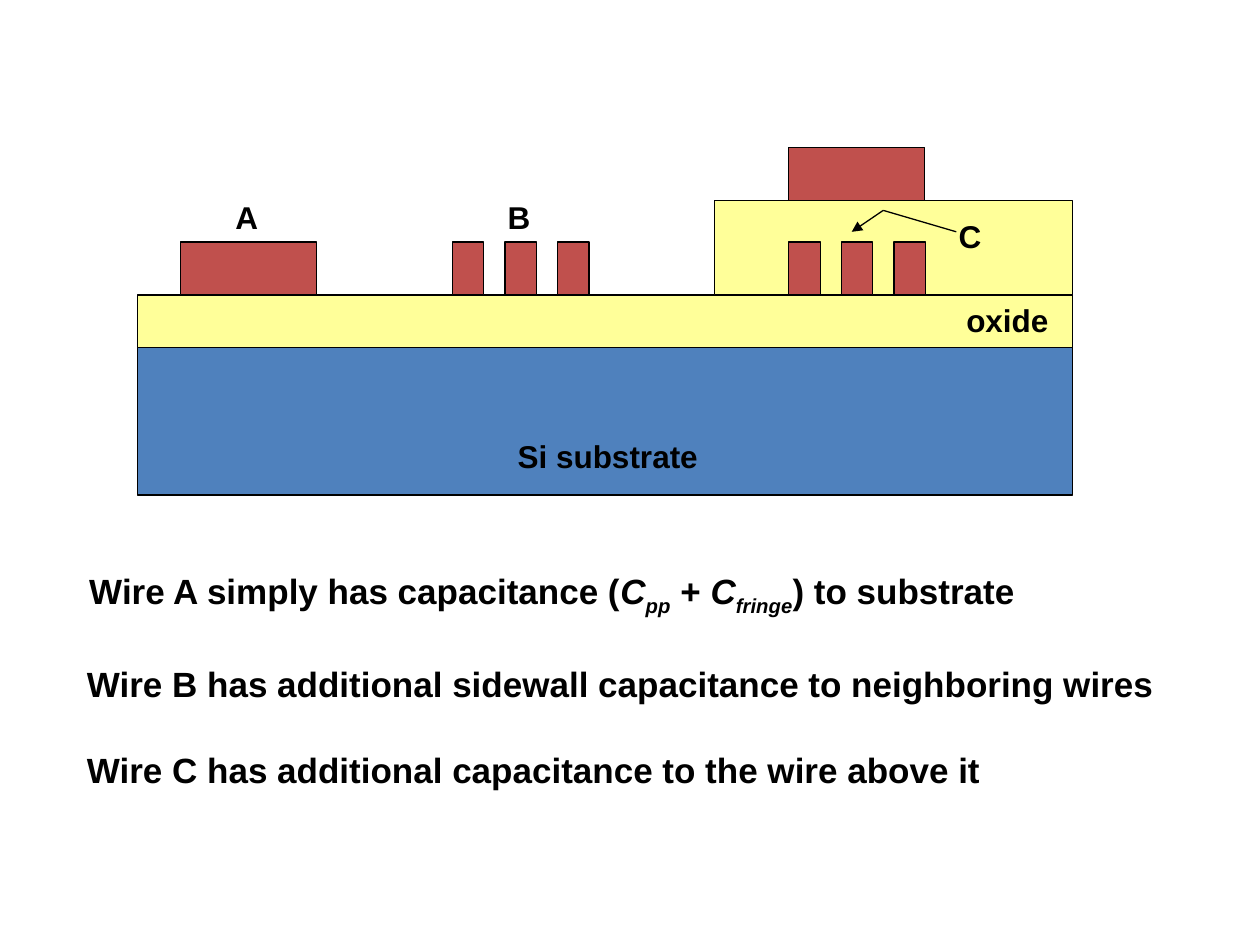
from lxml.etree import SubElement
from pptx import Presentation
from pptx.dml.color import RGBColor
from pptx.enum.shapes import MSO_CONNECTOR, MSO_SHAPE
from pptx.enum.text import PP_ALIGN
from pptx.oxml.ns import qn
from pptx.util import Inches, Pt

BLACK = RGBColor(0x00, 0x00, 0x00)
METAL = RGBColor(0xC0, 0x50, 0x4D)
OXIDE = RGBColor(0xFF, 0xFF, 0x99)
SILICON = RGBColor(0x4F, 0x81, 0xBD)

# Cross-section geometry, in inches
STACK_LEFT, STACK_WIDTH = 1.09, 7.42
SURFACE = 2.34                      # top of the lower oxide
LAYER = 0.42                        # thickness of oxide and of each wire
SUBSTRATE_HEIGHT = 1.17
COVER_LEFT, COVER_HEIGHT = 5.67, 0.75
WIDE_WIRE, NARROW_WIRE, WIRE_PITCH = 1.08, 0.25, 0.417
WIRE_A, WIRES_B, WIRES_C = 1.43, 3.59, 6.26

# Labels: text, left, top, width, alignment
LABELS = [
    ("A", 1.77, 1.52, 0.42, PP_ALIGN.LEFT),
    ("B", 3.93, 1.52, 0.42, PP_ALIGN.LEFT),
    ("C", 7.51, 1.67, 0.33, PP_ALIGN.LEFT),
    ("Si substrate", 4.01, 3.42, 1.66, PP_ALIGN.LEFT),
    ("oxide", 7.0, 2.34, 1.42, PP_ALIGN.RIGHT),
]

# Statements: left, top, width, spans of (text, italic, subscript)
STATEMENTS = [
    (0.61, 4.47, 8.8, [
        ("Wire A simply has capacitance (", False, False),
        ("C", True, False), ("pp", True, True), (" + ", False, False),
        ("C", True, False), ("fringe", True, True),
        (") to substrate", False, False)]),
    (0.59, 5.21, 8.81, [
        ("Wire B has additional sidewall capacitance to neighboring wires", False, False)]),
    (0.59, 5.89, 8.42, [
        ("Wire C has additional capacitance to the wire above it", False, False)]),
]

POINTER = [(7.59, 1.84), (7.01, 1.67), (6.76, 1.84)]


def add_block(page, left, top, width, height, color):
    block = page.shapes.add_shape(
        MSO_SHAPE.RECTANGLE, Inches(left), Inches(top), Inches(width), Inches(height))
    block.shadow.inherit = False
    block.fill.solid()
    block.fill.fore_color.rgb = color
    block.line.color.rgb = BLACK
    block.line.width = Pt(0.75)


def add_text(page, left, top, width, height, size, spans, alignment=PP_ALIGN.LEFT):
    box = page.shapes.add_textbox(Inches(left), Inches(top), Inches(width), Inches(height))
    box.text_frame.word_wrap = True
    para = box.text_frame.paragraphs[0]
    para.alignment = alignment
    para.font.name = "Arial"
    para.font.size = Pt(size)
    para.font.bold = True
    para.font.color.rgb = BLACK
    for text, italic, subscript in spans:
        span = para.add_run()
        span.text = text
        if italic:
            span.font.italic = True
        if subscript:
            span.font._element.set("baseline", "-25000")


def add_line(page, start, end):
    line = page.shapes.add_connector(
        MSO_CONNECTOR.STRAIGHT, *(Inches(value) for value in start + end))
    line.line.color.rgb = BLACK
    line.line.width = Pt(0.75)
    SubElement(line._element.spPr, qn("a:effectLst"))
    return line


def main():
    deck = Presentation()
    deck.slide_width, deck.slide_height = Inches(10), Inches(7.5)
    page = deck.slides.add_slide(deck.slide_layouts[6])

    # Layers
    add_block(page, STACK_LEFT, SURFACE + LAYER, STACK_WIDTH, SUBSTRATE_HEIGHT, SILICON)
    add_block(page, STACK_LEFT, SURFACE, STACK_WIDTH, LAYER, OXIDE)
    add_block(page, COVER_LEFT, SURFACE - COVER_HEIGHT,
              STACK_LEFT + STACK_WIDTH - COVER_LEFT, COVER_HEIGHT, OXIDE)

    # Wires: wide ones, then the two rows of three
    add_block(page, WIRE_A, SURFACE - LAYER, WIDE_WIRE, LAYER, METAL)
    add_block(page, WIRES_C, SURFACE - COVER_HEIGHT - LAYER, WIDE_WIRE, LAYER, METAL)
    for first in (WIRES_B, WIRES_C):
        for index in range(3):
            add_block(page, first + index * WIRE_PITCH, SURFACE - LAYER,
                      NARROW_WIRE, LAYER, METAL)

    # Pointer from label C to the middle wire
    for start, end in zip(POINTER, POINTER[1:]):
        line = add_line(page, start, end)
    SubElement(line.line._get_or_add_ln(), qn("a:tailEnd"), type="triangle")

    # Text
    for text, left, top, width, alignment in LABELS:
        add_text(page, left, top, width, 0.4, 18, [(text, False, False)], alignment)
    for left, top, width, spans in STATEMENTS:
        add_text(page, left, top, width, 0.43, 20, spans)

    deck.save("out.pptx")


if __name__ == "__main__":
    main()
